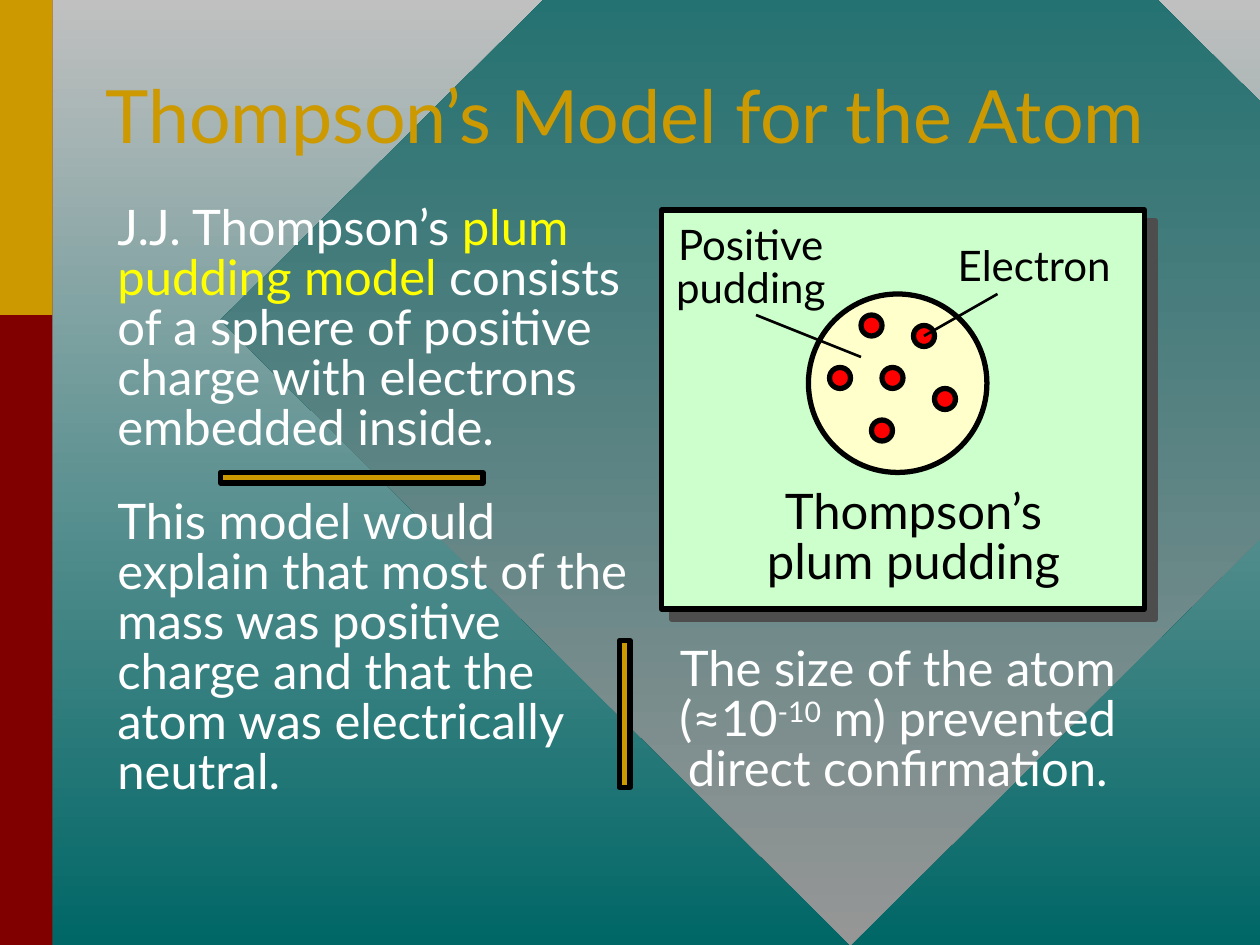
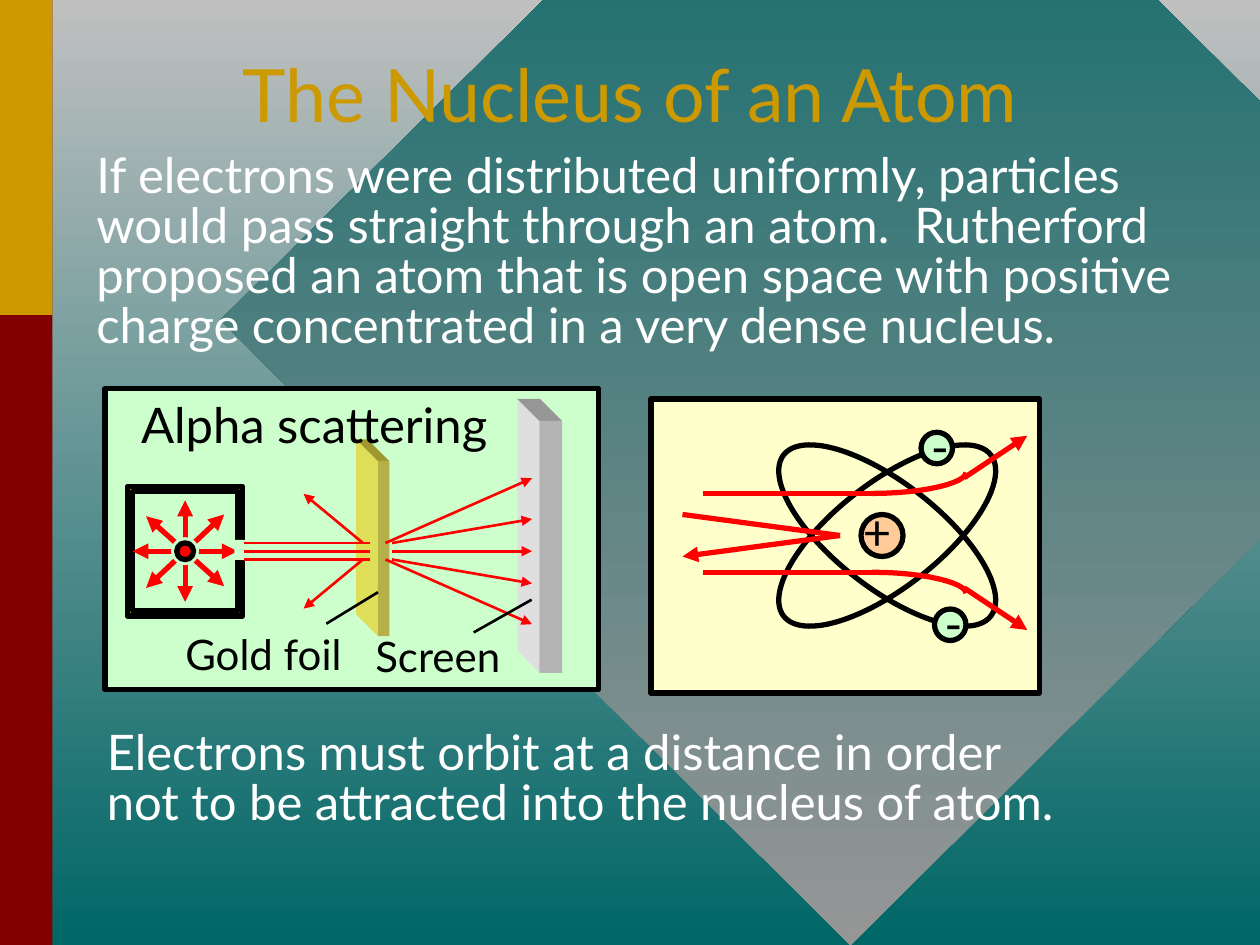
from lxml import etree
from pptx import Presentation
from pptx import util as u
from pptx.dml.color import RGBColor
from pptx.enum import shapes, text
from pptx.oxml import ns

FONT = "Lato"
GOLD = RGBColor(0xCC, 0x99, 0x00)
MAROON = RGBColor(0x80, 0x00, 0x00)
TEAL = RGBColor(0x00, 0x66, 0x66)
SILVER = RGBColor(0xC0, 0xC0, 0xC0)
GRAY = RGBColor(0x96, 0x96, 0x96)
BLACK = RGBColor(0x00, 0x00, 0x00)
WHITE = RGBColor(0xFF, 0xFF, 0xFF)
YELLOW = RGBColor(0xFF, 0xFF, 0x00)
RED = RGBColor(0xFF, 0x00, 0x00)
MINT = RGBColor(0xCC, 0xFF, 0xCC)
CREAM = RGBColor(0xFF, 0xFF, 0xCC)
PEACH = RGBColor(0xFF, 0xCC, 0x99)
FOIL_FACES = (RGBColor(0xB5, 0xB0, 0x48), RGBColor(0xDE, 0xDE, 0x59), RGBColor(0xA0, 0x98, 0x2E))
SCREEN_FACES = (RGBColor(0xB4, 0xB4, 0xB4), RGBColor(0xDF, 0xDF, 0xDF), RGBColor(0x96, 0x96, 0x96))

RECTANGLE = shapes.MSO_SHAPE.RECTANGLE
OVAL = shapes.MSO_SHAPE.OVAL
DIAMOND = shapes.MSO_SHAPE.DIAMOND
LEFT = text.PP_ALIGN.LEFT
CENTER = text.PP_ALIGN.CENTER


def points(values):
    return [u.Pt(value) for value in values]


def paint_gradient(fill, top_color, bottom_color):
    fill.gradient()
    fill.gradient_angle = 270
    for stop, color in zip(fill.gradient_stops, (top_color, bottom_color)):
        stop.color.rgb = color


def style_shape(shape, fill=None, outline=None):
    shape.shadow.inherit = False
    if fill is None:
        shape.fill.background()
    else:
        shape.fill.solid()
        shape.fill.fore_color.rgb = fill
    if outline is None:
        shape.line.fill.background()
    else:
        shape.line.color.rgb = outline
        shape.line.width = u.Pt(3)


def add_figure(slide, kind, box, fill=None, outline=None):
    shape = slide.shapes.add_shape(kind, *points(box))
    style_shape(shape, fill, outline)
    return shape


def add_text(slide, box, *parts, size=28, color=WHITE, align=LEFT, anchor=text.MSO_ANCHOR.TOP):
    frame = slide.shapes.add_textbox(*points(box)).text_frame
    frame.word_wrap = True
    frame.vertical_anchor = anchor
    paragraph = frame.paragraphs[0]
    paragraph.alignment = align
    paragraph.line_spacing = 0.85
    for part in parts:
        run = paragraph.add_run()
        run.text = part
        run.font.name = FONT
        run.font.size = u.Pt(size)
        run.font.color.rgb = color
    return paragraph.runs


def add_label(slide, box, label, size=24):
    add_text(slide, box, label, size=size, color=BLACK, align=CENTER)


def add_line(slide, start, end, color=BLACK, width=1.5, arrows=()):
    connector = slide.shapes.add_connector(
        shapes.MSO_CONNECTOR.STRAIGHT, *points(start + end))
    connector.line.color.rgb = color
    connector.line.width = u.Pt(width)
    properties = connector.element.spPr
    outline = properties.find(ns.qn("a:ln"))
    for arrow in arrows:
        etree.SubElement(outline, ns.qn(f"a:{arrow}"), type="triangle")
    etree.SubElement(properties, ns.qn("a:effectLst"))


def add_outline(slide, vertices, close):
    first, *rest = [points(vertex) for vertex in vertices]
    builder = slide.shapes.build_freeform(*first)
    builder.add_line_segments(rest, close=close)
    return builder.convert_to_shape()


def add_slab(slide, left, top, width, height, faces):
    front, side, lid = faces
    depth = 12.5
    back_left, back_top = left - depth, top - depth
    side_face = [(left, top), (back_left, back_top),
                 (back_left, back_top + height), (left, top + height)]
    lid_face = [(left, top), (back_left, back_top),
                (back_left + width, back_top), (left + width, top)]
    for vertices, color in ((side_face, side), (lid_face, lid)):
        style_shape(add_outline(slide, vertices, True), color)
    add_figure(slide, RECTANGLE, (left, top, width, height), front)


def add_panel_shadow(panel):
    effects = panel.element.spPr.find(ns.qn("a:effectLst"))
    shadow = etree.SubElement(effects, ns.qn("a:outerShdw"), dist=str(u.Pt(8.5)),
                              dir="2700000", algn="ctr", rotWithShape="0")
    etree.SubElement(shadow, ns.qn("a:srgbClr"), val="4D4D4D")


def add_themed_slide(presentation, title, title_box):
    slide = presentation.slides.add_slide(presentation.slide_layouts[6])
    paint_gradient(slide.background.fill, SILVER, TEAL)
    diamond = add_figure(slide, DIAMOND, (126, -174, 720, 714))
    paint_gradient(diamond.fill, TEAL, GRAY)
    add_figure(slide, RECTANGLE, (0, 0, 30, 540), MAROON)
    add_figure(slide, RECTANGLE, (0, 0, 30, 180), GOLD)
    add_text(slide, title_box, title, size=42, color=GOLD, align=CENTER,
             anchor=text.MSO_ANCHOR.MIDDLE)
    return slide


def draw_plum_pudding(slide):
    panel = add_figure(slide, RECTANGLE, (378, 120, 276, 228), MINT, BLACK)
    add_panel_shadow(panel)
    add_figure(slide, OVAL, (462, 168, 102, 102), CREAM, BLACK)
    for left, top in ((474, 210), (534, 222), (498, 240), (522, 186), (504, 210), (492, 180)):
        add_figure(slide, OVAL, (left, top, 12, 12), RED, BLACK)
    add_line(slide, (570, 168), (528, 192))
    add_label(slide, (534, 138, 114, 32), "Electron")
    add_label(slide, (378, 126, 102, 56), "Positive pudding")
    add_line(slide, (432, 180), (492, 204))
    add_label(slide, (408, 276, 228, 65), "Thompson’s plum pudding", 28)


def draw_alpha_source(slide, center, axis):
    for width, height, fill in ((66, 74, GOLD), (60.4, 68, MINT)):
        add_figure(slide, RECTANGLE,
                   (center - width / 2, axis - height / 2, width, height), fill, BLACK)
    for reach, rise in ((30, 0), (0, 29), (22.3, 20), (22.3, -21)):
        add_line(slide, (center - reach, axis - rise), (center + reach, axis + rise),
                 RED, 3, ("headEnd", "tailEnd"))
    for size, fill, outline in ((16, MINT, None), (9.6, RED, BLACK)):
        add_figure(slide, OVAL, (center - size / 2, axis - size / 2, size, size), fill, outline)
    add_figure(slide, RECTANGLE, (134, axis - 6.5, 10.8, 11.5), MINT)


def draw_alpha_scattering(slide):
    axis, beam_gap = 315, 4.7
    add_figure(slide, RECTANGLE, (60, 222, 282, 172), MINT, BLACK)
    draw_alpha_source(slide, 105.8, axis)
    add_slab(slide, 216, 263.5, 6.5, 100, FOIL_FACES)
    add_slab(slide, 308.2, 240.5, 13, 144, SCREEN_FACES)
    add_label(slide, (95.8, 360, 109.4, 32), "Gold foil")
    add_label(slide, (203, 361.4, 94.3, 32), "Screen")
    for offset in (-beam_gap, 0, beam_gap):
        add_line(slide, (139.5, axis + offset), (211.5, axis + offset), RED)
    add_line(slide, (224, axis), (304, axis), RED, arrows=("tailEnd",))
    for side in (-1, 1):
        for start, end, spread in ((207.4, 173.5, 32.8), (224, 304, 18.4), (220.3, 304, 41.7)):
            add_line(slide, (start, axis + side * beam_gap), (end, axis + side * spread),
                     RED, arrows=("tailEnd",))
    add_line(slide, (186.5, 356.4), (216, 338.4))
    add_line(slide, (270.7, 361.4), (303.8, 342.7))
    add_label(slide, (64, 226.8, 231, 36), "Alpha scattering", 28)


def bend_point(share, y, side):
    rest = 1 - share
    weights = (rest ** 3, 3 * rest ** 2 * share, 3 * rest * share ** 2, share ** 3)
    controls = ((498, 0), (528, 0), (552, 6), (552, 12))
    return (sum(w * x for w, (x, _) in zip(weights, controls)),
            y + side * sum(w * rise for w, (_, rise) in zip(weights, controls)))


def draw_deflected_path(slide, y, side):
    add_line(slide, (402, y), (504, y), RED, 3)
    bend = add_outline(slide, [bend_point(step / 12, y, side) for step in range(13)], False)
    style_shape(bend, outline=RED)
    add_line(slide, (551, y + side * 9), (587, y + side * 33), RED, 3, ("tailEnd",))


def draw_nuclear_atom(slide):
    add_figure(slide, RECTANGLE, (372, 228, 222, 168), CREAM, BLACK)
    add_figure(slide, OVAL, (492, 294, 24, 24), PEACH, BLACK)
    add_label(slide, (486, 288, 30, 36), "+", 28)
    for tilt in (37.9, -37.9):
        orbit = add_figure(slide, OVAL, (432, 276, 150, 60), outline=BLACK)
        orbit.rotation = tilt
    for left, top in ((534, 348), (526.3, 247)):
        add_figure(slide, OVAL, (left, top, 18, 18), MINT, BLACK)
        add_label(slide, (left - 4.2, top - 7.2, 30, 36), "-", 28)


def draw_alpha_paths(slide):
    draw_deflected_path(slide, 282, -1)
    draw_deflected_path(slide, 327, 1)
    add_line(slide, (390, 294), (480, 306), RED, 3)
    add_line(slide, (480, 306), (390, 318), RED, 3, ("tailEnd",))


def build_thompson_slide(presentation):
    slide = add_themed_slide(presentation, "Thompson’s Model for the Atom", (48, 24, 618, 90))
    draw_plum_pudding(slide)
    model_runs = add_text(
        slide, (60, 114, 306, 150), "J.J. Thompson’s ", "plum pudding model",
        " consists of a sphere of positive charge with electrons embedded inside.")
    model_runs[1].font.color.rgb = YELLOW
    add_text(slide, (60, 282, 306, 179),
             "This model would explain that most of the mass was positive charge "
             "and that the atom was electrically neutral.")
    add_figure(slide, RECTANGLE, (126, 270, 150, 6), GOLD, BLACK)
    size_runs = add_text(slide, (366, 366, 294, 93), "The size of the atom (≈10", "-10",
                         " m) prevented direct confirmation.", align=CENTER)
    size_runs[1].font._element.set("baseline", "30000")
    add_figure(slide, RECTANGLE, (354, 366, 6, 84), GOLD, BLACK)


def build_nucleus_slide(presentation):
    slide = add_themed_slide(presentation, "The Nucleus of an Atom", (72, 12, 576, 90))
    add_text(slide, (48, 84, 642, 122),
             "If electrons were distributed uniformly, particles would pass straight "
             "through an atom.  Rutherford proposed an atom that is open space with "
             "positive charge concentrated in a very dense nucleus.")
    draw_alpha_scattering(slide)
    draw_nuclear_atom(slide)
    add_text(slide, (54, 414, 570, 65),
             "Electrons must orbit at a distance in order not to be attracted into "
             "the nucleus of atom.")
    draw_alpha_paths(slide)


def main():
    presentation = Presentation()
    presentation.slide_width = u.Pt(720)
    presentation.slide_height = u.Pt(540)
    build_thompson_slide(presentation)
    build_nucleus_slide(presentation)
    presentation.save("out.pptx")


if __name__ == "__main__":
    main()
